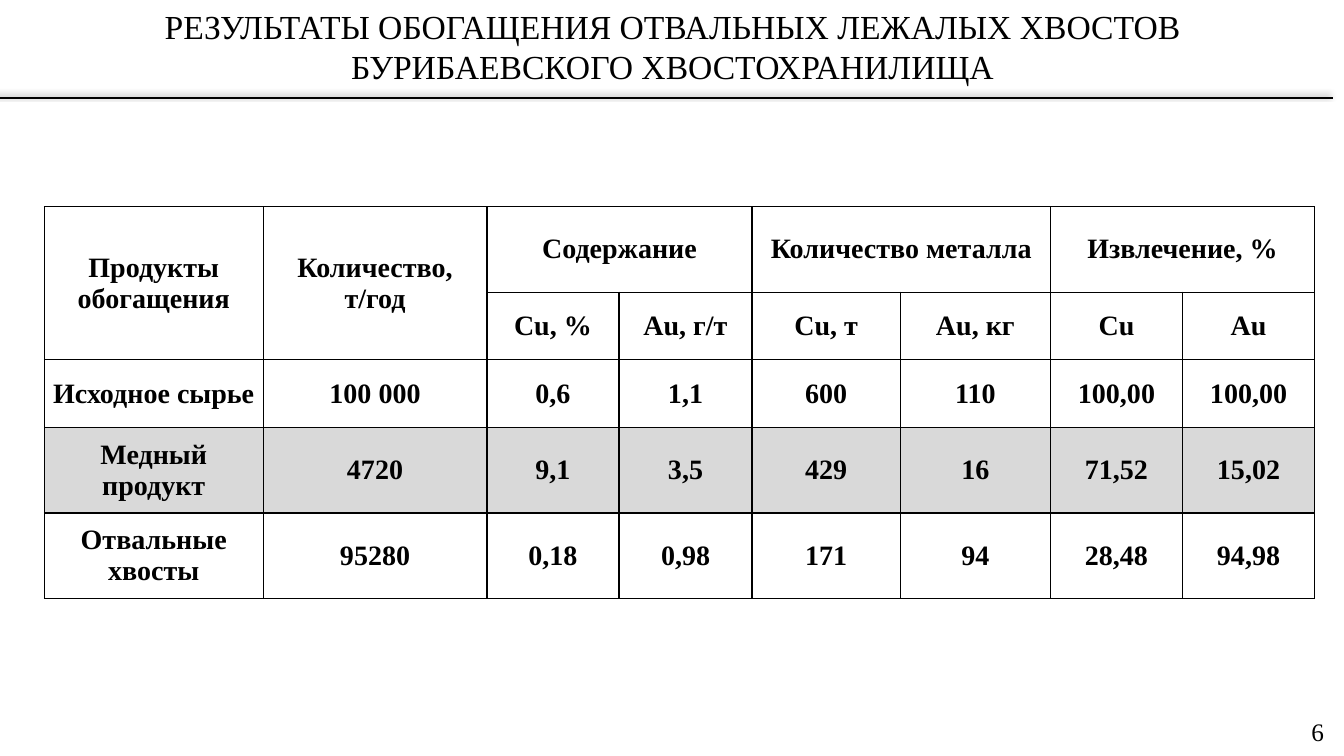
from lxml import etree
from pptx import Presentation
from pptx import util as u
from pptx.dml.color import RGBColor
from pptx.enum import shapes, text
from pptx.oxml import parse_xml
from pptx.oxml.ns import nsdecls, qn

PX = 9144
THEME = {
    "font": "Times New Roman",
    "ink": "000000",
    "highlight": "D9D9D9",
    "title": 24,
    "table": 20,
    "number": 18,
}


def write(frame, wording, size, align, frame_format, bold=False):
    for name, value in frame_format.items():
        setattr(frame, name, value)
    paragraph = frame.paragraphs[0]
    paragraph.alignment = align
    paragraph.line_spacing = 1.0
    run = paragraph.add_run()
    run.text = wording
    run.font.color.rgb = RGBColor.from_string(THEME["ink"])
    font_format = {"name": THEME["font"], "size": u.Pt(THEME[size]), "bold": bold}
    for name, value in font_format.items():
        setattr(run.font, name, value)


presentation = Presentation()
presentation.slide_width = 1333 * PX
presentation.slide_height = 750 * PX
slide = presentation.slides.add_slide(presentation.slide_layouts[5])

rule = slide.shapes.add_connector(
    shapes.MSO_CONNECTOR.STRAIGHT, -12 * PX, 97 * PX, 1322 * PX, 97 * PX
)
rule.line.width = u.Pt(1.5)
rule.line.color.rgb = RGBColor.from_string(THEME["ink"])
rule._element.spPr.append(parse_xml(
    f'<a:effectLst {nsdecls("a")}>'
    f'<a:outerShdw blurRad="{u.Pt(4)}" dist="{u.Pt(3)}" dir="{225 * 60000}">'
    f'<a:srgbClr val="{THEME["ink"]}"><a:alpha val="40000"/></a:srgbClr>'
    "</a:outerShdw></a:effectLst>"
))

title = slide.shapes.title
title_format = {"left": 30, "top": 1, "width": 1274, "height": 131}
for name, value in title_format.items():
    setattr(title, name, value * PX)
write(
    title.text_frame,
    "РЕЗУЛЬТАТЫ ОБОГАЩЕНИЯ ОТВАЛЬНЫХ ЛЕЖАЛЫХ ХВОСТОВ БУРИБАЕВСКОГО ХВОСТОХРАНИЛИЩА",
    "title",
    text.PP_ALIGN.CENTER,
    {
        "word_wrap": True,
        "auto_size": text.MSO_AUTO_SIZE.NONE,
        "vertical_anchor": text.MSO_ANCHOR.TOP,
    },
)

column_widths = [217, 222, 131, 132, 147, 149, 131, 131]
row_heights = [85, 67, 67, 85, 85]
highlighted_row = 3
rows = [
    ["Продукты обогащения", "Количество, т/год", "Содержание", "",
     "Количество металла", "", "Извлечение, %", ""],
    ["", "", "Cu, %", "Au, г/т", "Cu, т", "Au, кг", "Cu", "Au"],
    ["Исходное сырье", "100 000", "0,6", "1,1", "600", "110", "100,00", "100,00"],
    ["Медный продукт", "4720", "9,1", "3,5", "429", "16", "71,52", "15,02"],
    ["Отвальные хвосты", "95280", "0,18", "0,98", "171", "94", "28,48", "94,98"],
]
cell_format = {
    "vertical_anchor": text.MSO_ANCHOR.MIDDLE,
    "margin_left": 2 * PX,
    "margin_right": 2 * PX,
    "margin_top": 0,
    "margin_bottom": 0,
}

table = slide.shapes.add_table(
    len(rows), len(column_widths), 44 * PX, 205 * PX,
    sum(column_widths) * PX, sum(row_heights) * PX,
).table
for column, width in zip(table.columns, column_widths):
    column.width = width * PX
for row, height in zip(table.rows, row_heights):
    row.height = height * PX

for row_index, row in enumerate(rows):
    for column_index, wording in enumerate(row):
        cell = table.cell(row_index, column_index)
        for name, value in cell_format.items():
            setattr(cell, name, value)
        properties = cell._tc.get_or_add_tcPr()
        for side in ("lnL", "lnR", "lnT", "lnB"):
            border = etree.SubElement(properties, qn(f"a:{side}"), w=str(u.Pt(1)))
            fill = etree.SubElement(border, qn("a:solidFill"))
            etree.SubElement(fill, qn("a:srgbClr"), val=THEME["ink"])
        if row_index == highlighted_row:
            cell.fill.solid()
            cell.fill.fore_color.rgb = RGBColor.from_string(THEME["highlight"])
        else:
            cell.fill.background()
        if wording:
            write(cell.text_frame, wording, "table", text.PP_ALIGN.CENTER, {}, True)

for column_index in range(2):
    table.cell(0, column_index).merge(table.cell(1, column_index))
for column_index in range(2, len(column_widths), 2):
    table.cell(0, column_index).merge(table.cell(0, column_index + 1))

number = slide.shapes.add_textbox(1266 * PX, 706 * PX, 57 * PX, 40 * PX)
write(number.text_frame, "6", "number", text.PP_ALIGN.RIGHT, {"word_wrap": True})

presentation.save("out.pptx")
